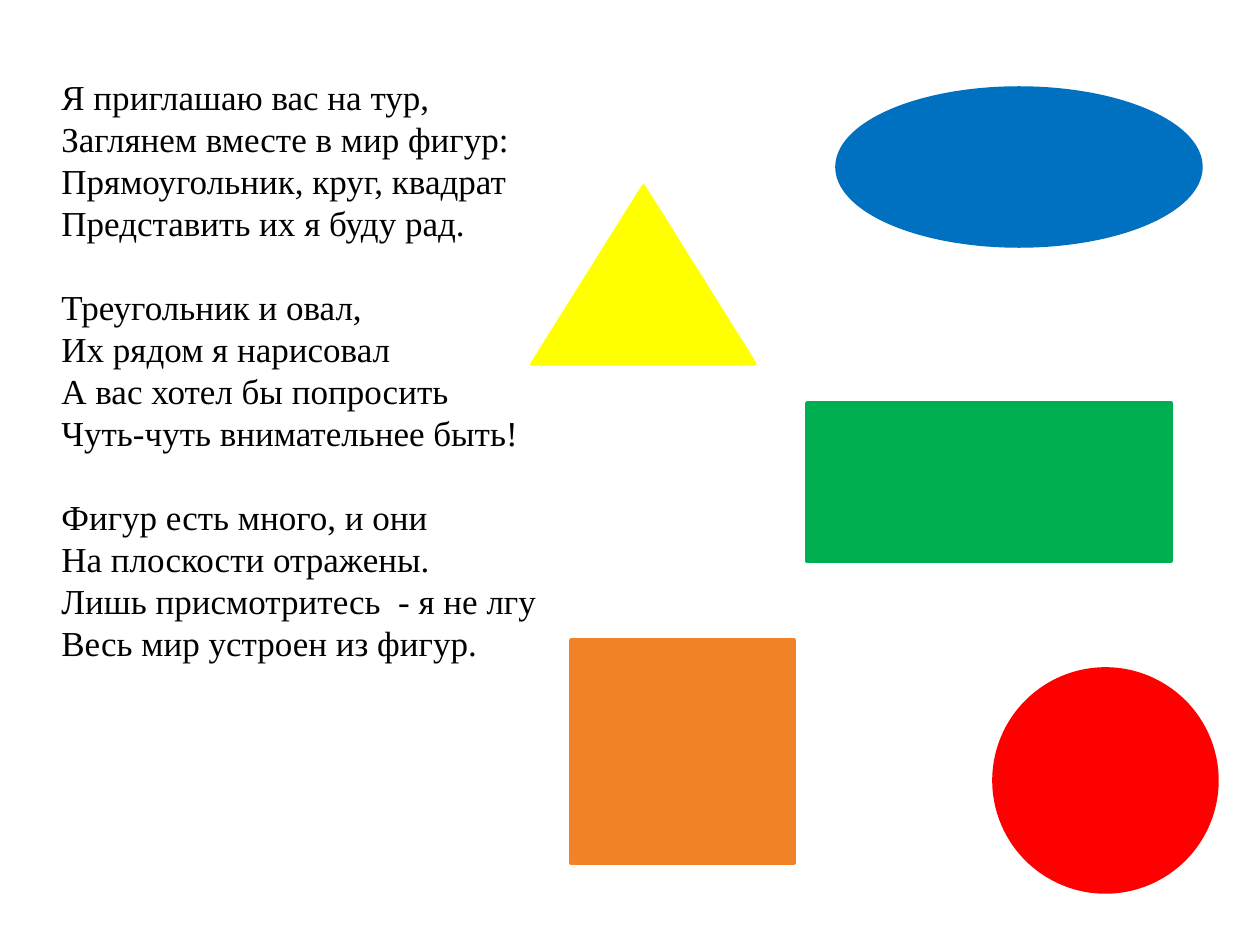
from pptx import Presentation, util as u
from pptx.dml.color import RGBColor
from pptx.enum import shapes, text

PX = u.Inches(1) // 126
FONT = "Times New Roman"
SIZE, LINE = 20, 24
HUES = {
    "ink": "000000",
    "green": "00B050",
    "red": "FF0000",
    "orange": "F18227",
    "blue": "0070C0",
    "yellow": "FFFF00",
}
KIND = shapes.MSO_SHAPE
FIGURES = [
    (KIND.RECTANGLE, "green", (807, 403, 364, 158)),
    (KIND.OVAL, "red", (994, 669, 223, 223)),
    (KIND.RECTANGLE, "orange", (571, 640, 223, 223)),
    (KIND.OVAL, "blue", (837, 88, 364, 158)),
    (KIND.ISOSCELES_TRIANGLE, "yellow", (532, 186, 223, 178)),
]
POEM = [
    [
        "Я приглашаю вас на тур,",
        "Заглянем вместе в мир фигур:",
        "Прямоугольник, круг, квадрат",
        "Представить их я буду рад.",
    ],
    [
        "Треугольник и овал,",
        "Их рядом я нарисовал",
        "А вас хотел бы попросить",
        "Чуть-чуть внимательнее быть!",
    ],
    [
        "Фигур есть много, и они",
        "На плоскости отражены.",
        "Лишь присмотритесь  - я не лгу",
        "Весь мир устроен из фигур.",
    ],
]


def hue(name):
    return RGBColor.from_string(HUES[name])


def emu(box):
    return [n * PX for n in box]


def add_poem(slide, box):
    """Set one paragraph per verse, with a line's gap between stanzas."""
    frame = slide.shapes.add_textbox(*emu(box)).text_frame
    frame.word_wrap = True
    frame.auto_size = text.MSO_AUTO_SIZE.NONE
    para = frame.paragraphs[0]
    for s, stanza in enumerate(POEM):
        for v, verse in enumerate(stanza):
            if s or v:
                para = frame.add_paragraph()
            para.line_spacing = u.Pt(LINE)
            para.space_before = u.Pt(LINE if s and not v else 0)
            run = para.add_run()
            run.text = verse
            run.font.name = FONT
            run.font.size = u.Pt(SIZE)
            run.font.color.rgb = hue("ink")


def add_figure(slide, kind, name, box):
    figure = slide.shapes.add_shape(kind, *emu(box))
    figure.shadow.inherit = False
    figure.fill.solid()
    figure.fill.fore_color.rgb = hue(name)
    figure.line.color.rgb = hue(name)
    figure.line.width = u.Pt(2)


def main():
    deck = Presentation()
    deck.slide_width, deck.slide_height = emu((1260, 945))
    slide = deck.slides.add_slide(deck.slide_layouts[6])
    add_poem(slide, (49, 69, 630, 798))
    for kind, name, box in FIGURES:
        add_figure(slide, kind, name, box)
    deck.save("out.pptx")


if __name__ == "__main__":
    main()
